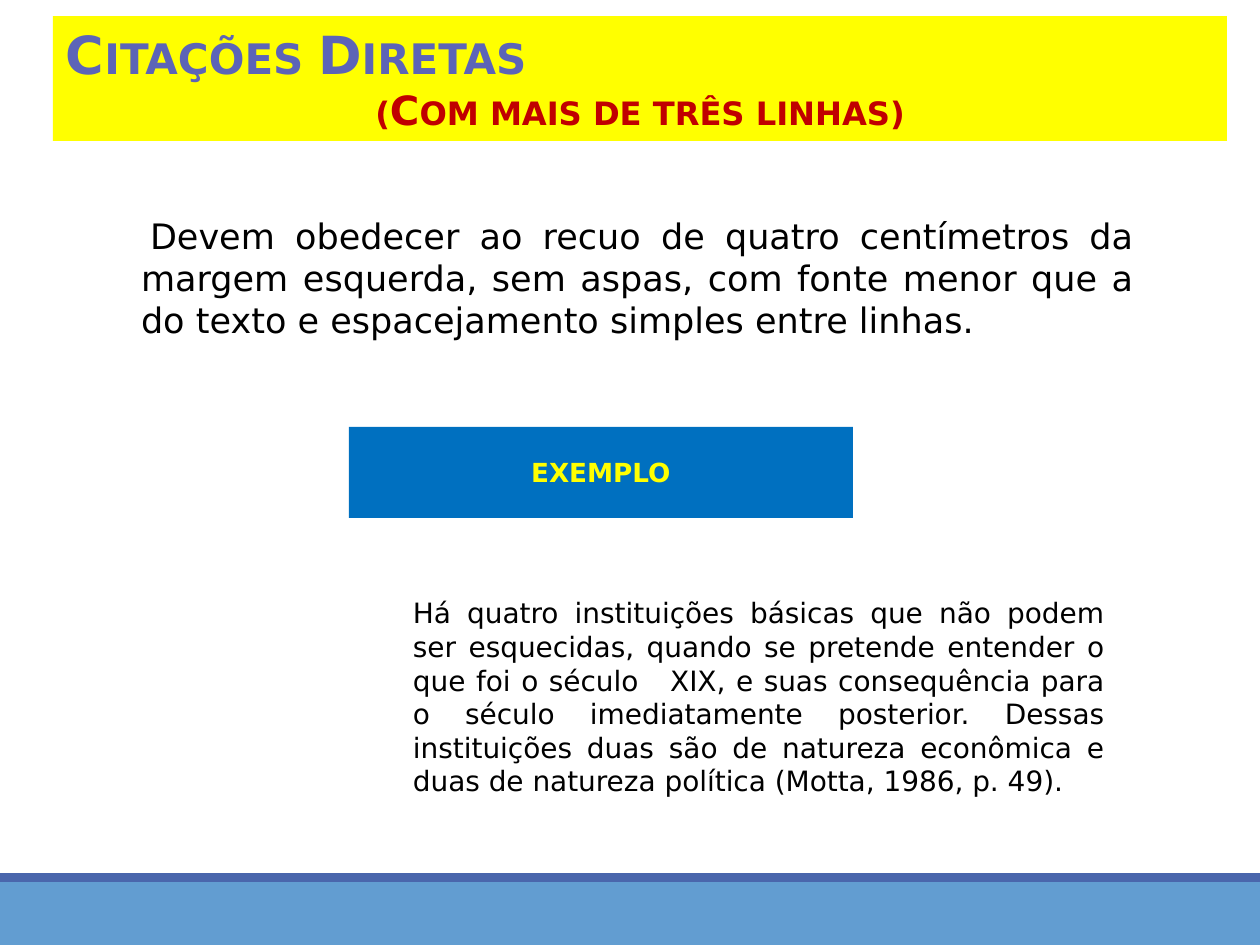
from dataclasses import dataclass

from lxml import etree
from pptx import Presentation
from pptx.dml.color import RGBColor
from pptx.enum.shapes import MSO_SHAPE
from pptx.enum.text import MSO_ANCHOR, MSO_AUTO_SIZE, PP_ALIGN
from pptx.oxml.ns import qn
from pptx.shapes.autoshape import Shape
from pptx.slide import Slide
from pptx.text.text import TextFrame
from pptx.util import Pt

EMU_PER_PX = 914400 / 126


@dataclass(frozen=True)
class Theme:
    font: str = "DejaVu Sans"
    line_height: float = 1.2
    heading_size: int = 30
    subheading_size: int = 23
    rule_size: int = 20
    quote_size: int = 16
    label_size: int = 15
    text: str = "000000"
    heading: str = "5C64B7"
    subheading: str = "C00000"
    yellow: str = "FFFF00"
    label_fill: str = "0070C0"
    footer: str = "629DD1"
    footer_edge: str = "4A66AC"


@dataclass(frozen=True)
class Box:
    left: int
    top: int
    width: int
    height: int

    def emu(self) -> tuple[int, ...]:
        return tuple(px(n) for n in (self.left, self.top, self.width, self.height))


@dataclass(frozen=True)
class Block:
    box: Box
    color: str


THEME = Theme()
FOOTER = (
    Block(Box(0, 882, 1260, 63), THEME.footer),
    Block(Box(0, 873, 1260, 9), THEME.footer_edge),
)
LABEL = Block(Box(349, 427, 504, 91), THEME.label_fill)
TITLE = Block(Box(53, 16, 1174, 125), THEME.yellow)
RULE_BOX = Box(92, 199, 1055, 186)
QUOTE_BOX = Box(400, 590, 718, 214)


def px(length: int) -> int:
    return round(length * EMU_PER_PX)


def place(shape: Shape, box: Box) -> None:
    shape.left, shape.top, shape.width, shape.height = box.emu()


def fill(shape: Shape, color: str) -> None:
    shape.fill.solid()
    shape.fill.fore_color.rgb = RGBColor.from_string(color)


def add_block(slide: Slide, block: Block) -> Shape:
    shape = slide.shapes.add_shape(MSO_SHAPE.RECTANGLE, *block.box.emu())
    fill(shape, block.color)
    shape.line.fill.background()
    shape.shadow.inherit = False
    return shape


def set_up_frame(frame: TextFrame, anchor: MSO_ANCHOR = MSO_ANCHOR.TOP,
                 top_inset: int = 6) -> None:
    frame.word_wrap = True
    frame.auto_size = MSO_AUTO_SIZE.NONE
    frame.vertical_anchor = anchor
    frame.margin_left = frame.margin_right = px(13)
    frame.margin_top, frame.margin_bottom = px(top_inset), px(6)


def write(frame: TextFrame, text: str, *, size: int, color: str = THEME.text,
          align: PP_ALIGN = PP_ALIGN.JUSTIFY, bold: bool = False,
          small_caps: bool = False, margin: int = 0, indent: int = 0) -> None:
    """Fill the empty first paragraph, or add one after the existing text."""
    paragraph = frame.add_paragraph() if frame.text else frame.paragraphs[0]
    paragraph.alignment = align
    paragraph.line_spacing = Pt(size * THEME.line_height)
    paragraph.space_before = paragraph.space_after = Pt(0)
    properties = paragraph._p.get_or_add_pPr()
    properties.set("marL", str(px(margin)))
    properties.set("indent", str(px(indent)))
    etree.SubElement(properties, qn("a:buNone"))
    run = paragraph.add_run()
    run.text = text
    run.font.name = THEME.font
    run.font.size = Pt(size)
    run.font.bold = bold
    run.font.color.rgb = RGBColor.from_string(color)
    if small_caps:
        run.font._element.set("cap", "small")


def main() -> None:
    deck = Presentation()
    deck.slide_width, deck.slide_height = px(1260), px(945)
    slide = deck.slides.add_slide(deck.slide_layouts[1])
    title, rule = slide.placeholders

    for band in FOOTER:
        add_block(slide, band)

    place(title, TITLE.box)
    fill(title, TITLE.color)
    set_up_frame(title.text_frame)
    write(title.text_frame, "Citações Diretas", size=THEME.heading_size,
          color=THEME.heading, align=PP_ALIGN.LEFT, bold=True, small_caps=True)
    write(title.text_frame, "(Com mais de três linhas)", size=THEME.subheading_size,
          color=THEME.subheading, align=PP_ALIGN.CENTER, bold=True, small_caps=True)

    place(rule, RULE_BOX)
    set_up_frame(rule.text_frame, top_inset=15)
    write(rule.text_frame,
          "Devem obedecer ao recuo de quatro centímetros da margem esquerda, sem aspas, "
          "com fonte menor que a do texto e espacejamento simples entre linhas.",
          size=THEME.rule_size, margin=36, indent=9)

    label = add_block(slide, LABEL).text_frame
    set_up_frame(label, MSO_ANCHOR.MIDDLE)
    write(label, "EXEMPLO", size=THEME.label_size, color=THEME.yellow,
          align=PP_ALIGN.CENTER, bold=True)

    quote = slide.shapes.add_textbox(*QUOTE_BOX.emu()).text_frame
    set_up_frame(quote)
    write(quote,
          "Há quatro instituições básicas que não podem ser esquecidas, quando se "
          "pretende entender o que foi o século\tXIX, e suas consequência para o século "
          "imediatamente posterior. Dessas instituições duas são de natureza econômica "
          "e duas de natureza política (Motta, 1986, p. 49).",
          size=THEME.quote_size)

    deck.save("out.pptx")


if __name__ == "__main__":
    main()
